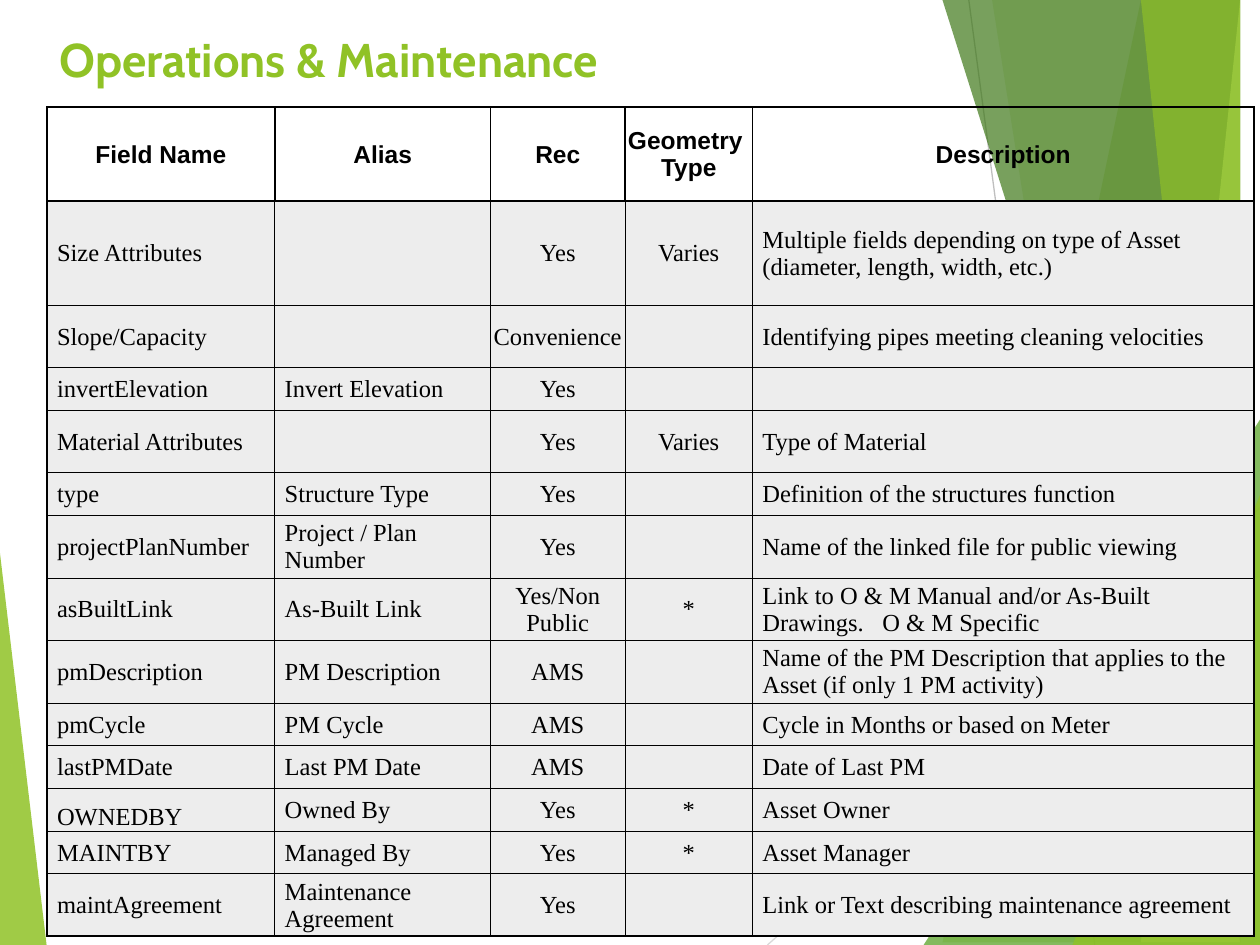
from lxml import etree
from pptx import Presentation
from pptx import util as u
from pptx.dml.color import RGBColor
from pptx.enum import shapes, text
from pptx.oxml.ns import qn

COLORS = {
    "lime": "90C226", "green": "54A021", "forest": "3F7819", "pale": "C0E474",
    "line": "BFBFBF", "light line": "D9D9D9", "cell": "EDEDED", "ink": "000000",
}
WIDTH, HEIGHT = 25.4, 19.05

# Lengths are centimetres, opacities are percent
LINES = [
    ((19.53, 0), (22.07, HEIGHT), "line"),
    ((WIDTH, 10.24), (15.47, HEIGHT), "light line"),
]
# Ribbons: left edge at the top, left edge at the bottom, colour, opacity
# Triangles: left, top, width, height, apex position, colour, opacity
DECORATIONS = [
    ("ribbon", (23.39, 19.13, "lime", 30)),
    ("ribbon", (20.02, 22.53, "lime", 20)),
    ("triangle", (18.62, 8.46, 6.78, 10.59, 1, "green", 72)),
    ("ribbon", (19.46, 24.59, "forest", 70)),
    ("ribbon", (24.84, 22.71, "pale", 70)),
    ("ribbon", (22.78, 25.1, "lime", 65)),
    ("triangle", (21.62, 9.98, 3.78, 9.07, 1, "lime", 80)),
    ("triangle", (0, 11.15, 0.94, 7.9, 0, "lime", 85)),
]

TITLE = "Operations & Maintenance"
HEADER = ["Field Name", "Alias", "Rec", "Geometry \nType", "Description"]
FIELDS = [
    ["Size Attributes", "", "Yes", "Varies",
     "Multiple fields depending on type of Asset (diameter, length, width, etc.)"],
    ["Slope/Capacity", "", "Convenience", "",
     "Identifying pipes meeting cleaning velocities"],
    ["invertElevation", "Invert Elevation", "Yes", "", ""],
    ["Material Attributes", "", "Yes", "Varies", "Type of Material"],
    ["type", "Structure Type", "Yes", "", "Definition of the structures function"],
    ["projectPlanNumber", "Project / Plan Number", "Yes", "",
     "Name of the linked file for public viewing"],
    ["asBuiltLink", "As-Built Link", "Yes/Non Public", "*",
     "Link to O & M Manual and/or As-Built Drawings.   O & M Specific"],
    ["pmDescription", "PM Description", "AMS", "",
     "Name of the PM Description that applies to the Asset (if only 1 PM activity)"],
    ["pmCycle", "PM Cycle", "AMS", "", "Cycle in Months or based on Meter"],
    ["lastPMDate", "Last PM Date", "AMS", "", "Date of Last PM"],
    ["OWNEDBY", "Owned By", "Yes", "*", "Asset Owner"],
    ["MAINTBY", "Managed By", "Yes", "*", "Asset Manager"],
    ["maintAgreement", "Maintenance Agreement", "Yes", "",
     "Link or Text describing maintenance agreement"],
]
COLUMN_WIDTHS = [4.59, 4.35, 2.71, 2.57, 10.11]
SHORT, TALL = 0.86, 1.26
ROW_HEIGHTS = [1.89, 2.1, TALL, SHORT, TALL, SHORT, TALL, TALL, TALL,
               SHORT, SHORT, SHORT, SHORT, TALL]
CENTERED_COLUMNS = (2, 3)

TITLE_FONT = {"name": "Cabin", "size": u.Pt(27), "bold": True}
HEADER_FONT = {"name": "Arial", "size": u.Pt(14), "bold": True}
BODY_FONT = {"name": "Times New Roman", "size": u.Pt(14), "bold": False}


def rgb(color):
    return RGBColor.from_string(COLORS[color])


def set_attributes(target, values):
    for name, value in values.items():
        setattr(target, name, value)


def format_text(paragraph, font, color, alignment):
    paragraph.alignment = alignment
    for run in paragraph.runs:
        set_attributes(run.font, font)
        run.font.color.rgb = rgb(color)


def paint(shape, color, opacity):
    shape.shadow.inherit = False
    shape.line.fill.background()
    shape.fill.solid()
    shape.fill.fore_color.rgb = rgb(color)
    solid = shape.element.spPr.find(qn("a:solidFill"))
    etree.SubElement(solid[0], qn("a:alpha"), val=str(opacity * 1000))


def add_line(slide, start, end, color):
    connector = slide.shapes.add_connector(
        shapes.MSO_CONNECTOR.STRAIGHT, *(u.Cm(value) for value in start + end))
    connector.line.color.rgb = rgb(color)
    connector.line.width = u.Pt(0.75)
    etree.SubElement(connector.element.spPr, qn("a:effectLst"))


def add_ribbon(slide, top_x, bottom_x, color, opacity):
    """Fill everything from a slanted left edge to the slide's right edge."""
    builder = slide.shapes.build_freeform(top_x, 0, scale=u.Cm(1))
    builder.add_line_segments([(WIDTH, 0), (WIDTH, HEIGHT), (bottom_x, HEIGHT)])
    paint(builder.convert_to_shape(), color, opacity)


def add_triangle(slide, left, top, width, height, apex, color, opacity):
    triangle = slide.shapes.add_shape(
        shapes.MSO_SHAPE.ISOSCELES_TRIANGLE,
        u.Cm(left), u.Cm(top), u.Cm(width), u.Cm(height))
    triangle.adjustments[0] = apex
    paint(triangle, color, opacity)


def set_borders(cell, widths):
    """Draw the left, right, top and bottom borders, with widths in points."""
    properties = cell._tc.get_or_add_tcPr()
    for side, width in zip("LRTB", widths):
        line = etree.SubElement(properties, qn(f"a:ln{side}"), w=str(u.Pt(width)))
        solid = etree.SubElement(line, qn("a:solidFill"))
        etree.SubElement(solid, qn("a:srgbClr"), val=COLORS["ink"])


def fill_cell(cell, content, row, column):
    is_header = row == 0
    centered = is_header or column in CENTERED_COLUMNS
    on_edge = (column == 0, column == len(HEADER) - 1, row == 1, row == len(FIELDS))
    cell.text = content
    set_attributes(cell, {
        "margin_left": u.Cm(0.02 if centered else 0.2),
        "margin_right": u.Cm(0.02),
        "margin_top": u.Cm(0.02),
        "margin_bottom": 0,
        "vertical_anchor": text.MSO_ANCHOR.BOTTOM if content == "OWNEDBY"
        else text.MSO_ANCHOR.MIDDLE,
    })
    set_borders(cell, [1 if is_header or edge else 0.5 for edge in on_edge])
    if is_header:
        cell.fill.background()
    else:
        cell.fill.solid()
        cell.fill.fore_color.rgb = rgb("cell")
    for paragraph in cell.text_frame.paragraphs:
        format_text(paragraph, HEADER_FONT if is_header else BODY_FONT, "ink",
                    text.PP_ALIGN.CENTER if centered else text.PP_ALIGN.LEFT)


def add_field_table(slide):
    rows = [HEADER] + FIELDS
    table = slide.shapes.add_table(
        len(rows), len(HEADER), u.Cm(0.95), u.Cm(2.16),
        u.Cm(sum(COLUMN_WIDTHS)), u.Cm(sum(ROW_HEIGHTS))).table
    set_attributes(table, {"first_row": False, "horz_banding": False})
    for column, width in zip(table.columns, COLUMN_WIDTHS):
        column.width = u.Cm(width)
    for row, height in zip(table.rows, ROW_HEIGHTS):
        row.height = u.Cm(height)
    for row, contents in enumerate(rows):
        for column, content in enumerate(contents):
            fill_cell(table.cell(row, column), content, row, column)


def place_title(slide):
    title = slide.shapes.title
    set_attributes(title, {"left": u.Cm(0.95), "top": u.Cm(0.48),
                           "width": u.Cm(17.9), "height": u.Cm(3.66)})
    title.text = TITLE
    set_attributes(title.text_frame, {
        "word_wrap": True, "auto_size": text.MSO_AUTO_SIZE.NONE,
        "vertical_anchor": text.MSO_ANCHOR.TOP})
    format_text(title.text_frame.paragraphs[0], TITLE_FONT, "lime", text.PP_ALIGN.LEFT)
    title.element.getparent().append(title.element)  # in front of the decorations


def main():
    presentation = Presentation()
    presentation.slide_width, presentation.slide_height = u.Cm(WIDTH), u.Cm(HEIGHT)
    slide = presentation.slides.add_slide(presentation.slide_layouts[5])
    for line in LINES:
        add_line(slide, *line)
    add_decoration = {"ribbon": add_ribbon, "triangle": add_triangle}
    for kind, values in DECORATIONS:
        add_decoration[kind](slide, *values)
    place_title(slide)
    add_field_table(slide)
    presentation.save("out.pptx")


if __name__ == "__main__":
    main()
